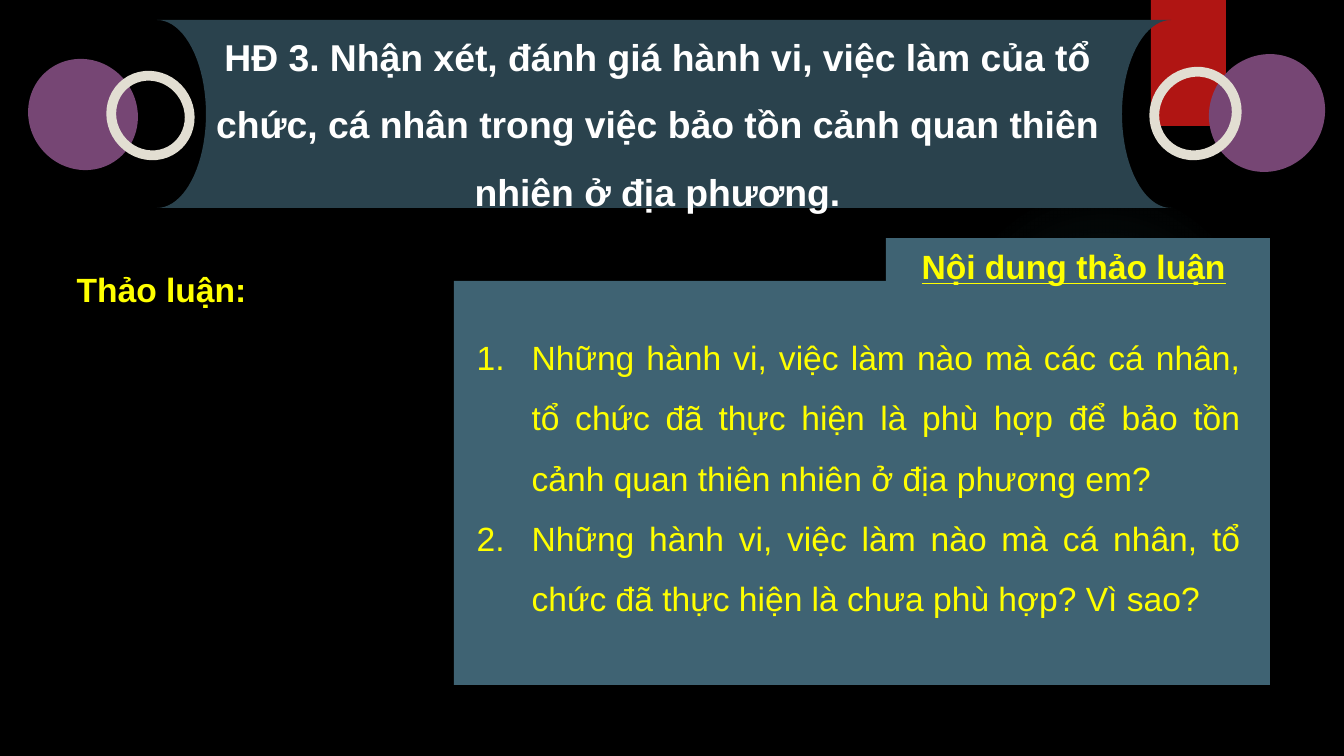
from math import cos, pi, sin

from lxml import etree
from pptx import Presentation
from pptx.dml.color import RGBColor
from pptx.enum.shapes import MSO_SHAPE as Preset
from pptx.enum.text import MSO_AUTO_SIZE as AutoSize, PP_ALIGN as Align
from pptx.oxml import parse_xml
from pptx.oxml.ns import nsdecls, qn
from pptx.util import Pt

PX = 914400 / 67.2  # EMU in one px
BLACK = RGBColor(0x00, 0x00, 0x00)
WHITE = RGBColor(0xFF, 0xFF, 0xFF)
YELLOW = RGBColor(0xFF, 0xFF, 0x00)
RED = RGBColor(0xB0, 0x15, 0x13)
NAVY = RGBColor(0x2A, 0x42, 0x4D)
STEEL = RGBColor(0x3F, 0x63, 0x73)
PURPLE = RGBColor(0x76, 0x46, 0x74)
CREAM = RGBColor(0xE2, 0xDE, 0xD2)
TEAL = RGBColor(0x50, 0xB9, 0xC1)

TITLE = ("HĐ 3. Nhận xét, đánh giá hành vi, việc làm của tổ chức, cá nhân "
         "trong việc bảo tồn cảnh quan thiên nhiên ở địa phương.")
QUESTIONS = [
    "Những hành vi, việc làm nào mà các cá nhân, tổ chức đã thực hiện "
    "là phù hợp để bảo tồn cảnh quan thiên nhiên ở địa phương em?",
    "Những hành vi, việc làm nào mà cá nhân, tổ chức đã thực hiện "
    "là chưa phù hợp? Vì sao?",
]


def emu(*lengths):
    return [round(length * PX) for length in lengths]


def paint(shape, color):
    shape.shadow.inherit = False
    shape.fill.solid()
    shape.fill.fore_color.rgb = color
    shape.line.fill.background()


def add_filled(slide, preset, box, color, rotation=0):
    shape = slide.shapes.add_shape(preset, *emu(*box))
    paint(shape, color)
    shape.rotation = rotation
    return shape


def add_ring(slide, box, rotation):
    ring = add_filled(slide, Preset.OVAL, box, CREAM, rotation)
    ring.fill.background()
    ring.line.color.rgb = CREAM
    ring.line.width = Pt(10.5)


def add_glow(slide, box):
    """Add a faint circle that fades out towards its rim."""
    glow = add_filled(slide, Preset.OVAL, box, TEAL)
    gradient = parse_xml(f'<a:gradFill {nsdecls("a")}><a:gsLst/><a:path path="circle">'
                         '<a:fillToRect l="50000" t="50000" r="50000" b="50000"/>'
                         '</a:path></a:gradFill>')
    for position, alpha in ((0, 7), (36, 6), (69, 0)):
        stop = etree.SubElement(gradient[0], qn("a:gs"), pos=str(position * 1000))
        color = etree.SubElement(stop, qn("a:srgbClr"), val=str(TEAL))
        etree.SubElement(color, qn("a:alpha"), val=str(alpha * 1000))
    properties = glow.element.spPr
    properties.replace(properties.find(qn("a:solidFill")), gradient)


def add_banner(slide, left, top, right, bottom, bulge):
    """Add a band whose two ends curve inwards as half ellipses."""
    middle, half = (top + bottom) / 2, (bottom - top) / 2
    steps = 40
    angles = [pi * step / steps - pi / 2 for step in range(steps + 1)]
    right_end = [(right - bulge * cos(a), middle + half * sin(a)) for a in angles]
    left_end = [(left + bulge * cos(a), middle - half * sin(a)) for a in angles]
    points = [emu(*point) for point in right_end + left_end]
    builder = slide.shapes.build_freeform(*points[0])
    builder.add_line_segments(points[1:], close=True)
    paint(builder.convert_to_shape(), NAVY)


def number_paragraph(paragraph, indent):
    properties = paragraph._p.get_or_add_pPr()
    properties.set("marL", str(indent))
    properties.set("indent", str(-indent))
    etree.SubElement(properties, qn("a:buFont"), typeface="+mj-lt")
    etree.SubElement(properties, qn("a:buAutoNum"), type="arabicPeriod")


def add_text(slide, box, texts, size, color, bold=False, underline=None, align=None,
             spacing=None, margin=None, wrap=True, number_indent=None):
    text_box = slide.shapes.add_textbox(*emu(*box))
    frame = text_box.text_frame
    frame.word_wrap = wrap
    frame.auto_size = AutoSize.SHAPE_TO_FIT_TEXT
    if margin is not None:
        frame.margin_left = frame.margin_right = margin
        frame.margin_top = frame.margin_bottom = margin
    frame.text = "\n".join(texts)
    for paragraph in frame.paragraphs:
        if spacing:
            paragraph.line_spacing = spacing
        if number_indent:
            number_paragraph(paragraph, *emu(number_indent))
        paragraph.alignment = align
        font = paragraph.font
        font.name, font.size, font.bold = "Arial", Pt(size), bold
        font.underline = underline
        font.color.rgb = color


def main():
    presentation = Presentation()
    presentation.slide_width, presentation.slide_height = emu(1344, 756)
    slide = presentation.slides.add_slide(presentation.slide_layouts[6])
    slide.background.fill.solid()
    slide.background.fill.fore_color.rgb = BLACK

    add_glow(slide, (949, 185, 310, 310))
    add_filled(slide, Preset.RECTANGLE, (1151, 0, 75, 126), RED)
    add_banner(slide, 157, 20, 1171, 208, bulge=49)
    add_text(slide, (190, 12, 935, 204), [TITLE], 40, WHITE, bold=True,
             align=Align.CENTER, spacing=1.5, margin=0)

    for disc, ring, rotation in (
        ((29, 58, 108, 113), (112, 75, 77, 81), 323.2),
        ((1210, 53, 114, 120), (1155, 71, 81, 85), 36.8),
    ):
        add_filled(slide, Preset.OVAL, disc, PURPLE, rotation)
        add_ring(slide, ring, rotation)

    add_filled(slide, Preset.RECTANGLE, (454, 281, 816, 404), STEEL)
    add_filled(slide, Preset.RECTANGLE, (886, 238, 384, 270), STEEL)
    add_text(slide, (70, 266, 245, 48), ["Thảo luận:"], 36, YELLOW, bold=True)
    add_text(slide, (915, 243, 321, 48), ["Nội dung thảo luận"], 36, YELLOW,
             bold=True, underline=True, wrap=False)
    add_text(slide, (470, 313, 777, 312), QUESTIONS, 36, YELLOW,
             align=Align.JUSTIFY, spacing=1.5, number_indent=55)
    presentation.save("out.pptx")


if __name__ == "__main__":
    main()
